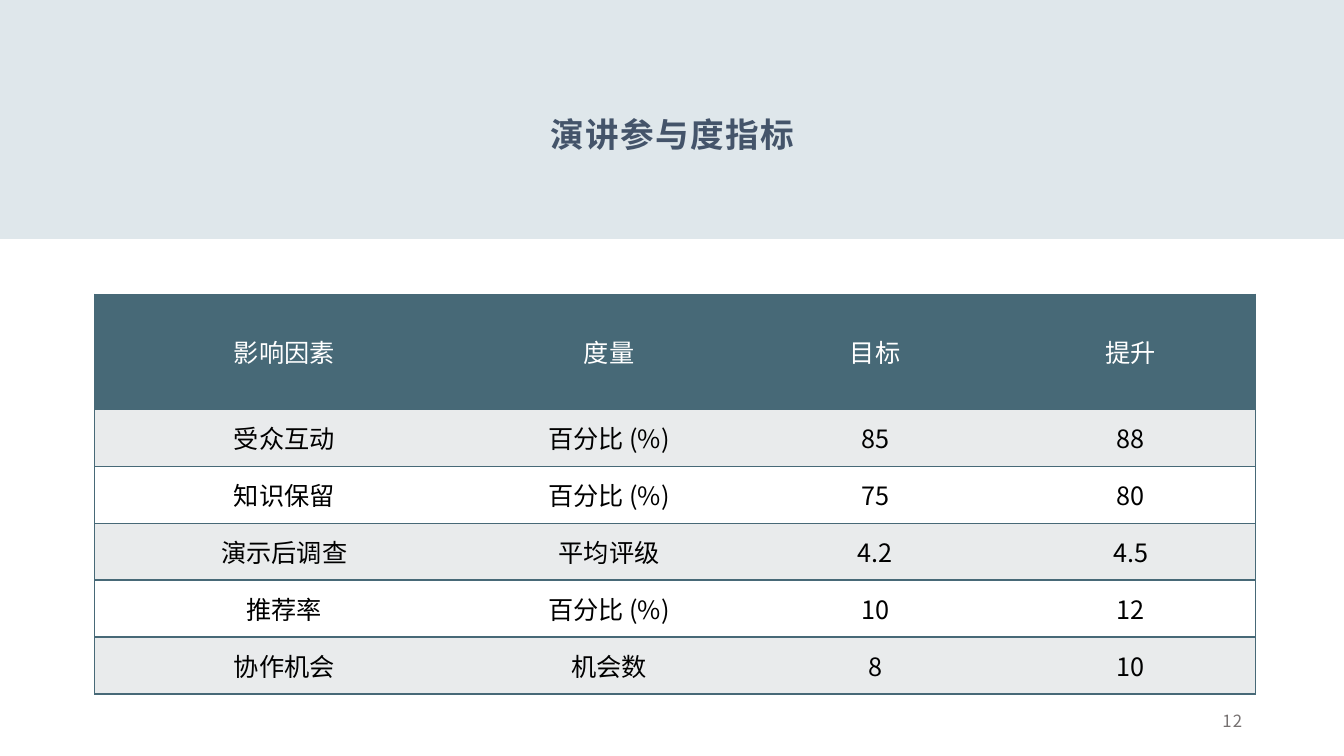
"""Build the slide of speech engagement metrics."""
from lxml.etree import SubElement
from pptx import Presentation
from pptx.dml.color import RGBColor
from pptx.enum.shapes import MSO_SHAPE
from pptx.enum.text import MSO_ANCHOR, MSO_AUTO_SIZE, PP_ALIGN
from pptx.oxml import parse_xml
from pptx.oxml.ns import nsdecls, qn
from pptx.util import Inches, Pt

TITLE = "演讲参与度指标"
PAGE = "12"
ROWS = [
    ("影响因素", "度量", "目标", "提升"),
    ("受众互动", "百分比 (%)", "85", "88"),
    ("知识保留", "百分比 (%)", "75", "80"),
    ("演示后调查", "平均评级", "4.2", "4.5"),
    ("推荐率", "百分比 (%)", "10", "12"),
    ("协作机会", "机会数", "8", "10"),
]
WIDTHS = (3.76, 2.68, 2.6, 2.47)
HEAD, BODY = 1.14, 0.565
FONT = "Noto Sans CJK SC"
PLAIN = "{2D5ABB26-0587-4C30-8999-92F81FD0307C}"
TEAL = RGBColor(0x47, 0x69, 0x77)
PALE = RGBColor(0xD7, 0xE2, 0xE7)
GREY = RGBColor(0xE9, 0xEB, 0xEC)
NAVY = RGBColor(0x44, 0x54, 0x6A)
STONE = RGBColor(0x76, 0x71, 0x71)
WHITE = RGBColor(0xFF, 0xFF, 0xFF)
BLACK = RGBColor(0, 0, 0)


def write(frame, text, size=18, color=BLACK, bold=False, align=PP_ALIGN.CENTER, space=0):
    """Put one formatted line of text into a text frame."""
    line = frame.paragraphs[0]
    line.alignment = align
    run = line.add_run()
    run.text = text
    font = run.font
    font.name, font.size, font.bold = FONT, Pt(size), bold
    font.color.rgb = color
    props = font._element
    SubElement(props, qn("a:ea")).set("typeface", FONT)
    if space:
        props.set("spc", str(space * 100))


def edge(cell, sides):
    """Draw teal borders on the given sides of a cell."""
    for place, side in enumerate(sides):
        line = parse_xml(
            f'<a:ln{side} {nsdecls("a")} w="12700"><a:solidFill>'
            f'<a:srgbClr val="{TEAL}"/></a:solidFill></a:ln{side}>'
        )
        cell._tc.get_or_add_tcPr().insert(place, line)


def add_band(slide, width):
    """Place the pale band behind the title."""
    band = slide.shapes.add_shape(MSO_SHAPE.RECTANGLE, 0, 0, width, Inches(2.37))
    band.shadow.inherit = False
    band.fill.solid()
    band.fill.fore_color.rgb = PALE
    band.line.fill.background()
    tint = band._element.spPr.find(qn("a:solidFill"))[0]
    SubElement(tint, qn("a:alpha")).set("val", "80000")
    slide.shapes._spTree.insert(2, band._element)


def add_title(slide):
    """Fill the title placeholder."""
    title = slide.shapes.title
    title.left, title.top = Inches(0.92), Inches(0.26)
    title.width, title.height = Inches(11.5), Inches(1.33)
    frame = title.text_frame
    frame.auto_size = MSO_AUTO_SIZE.NONE
    frame.vertical_anchor = MSO_ANCHOR.BOTTOM
    write(frame, TITLE, size=24, color=NAVY, bold=True, space=1)
    frame.paragraphs[0].line_spacing = 0.9


def add_grid(slide):
    """Add the table of metrics."""
    heights = [HEAD] + [BODY] * (len(ROWS) - 1)
    table = slide.shapes.add_table(
        len(ROWS), len(WIDTHS), Inches(0.94), Inches(2.92),
        Inches(sum(WIDTHS)), Inches(sum(heights)),
    ).table
    table._tbl.tblPr.find(qn("a:tableStyleId")).text = PLAIN
    for col, width in zip(table.columns, WIDTHS):
        col.width = Inches(width)
    last = len(WIDTHS) - 1
    for r, (row, height) in enumerate(zip(ROWS, heights)):
        table.rows[r].height = Inches(height)
        shade = TEAL if r == 0 else GREY if r % 2 else WHITE
        for c, text in enumerate(row):
            cell = table.cell(r, c)
            cell.vertical_anchor = MSO_ANCHOR.MIDDLE
            cell.fill.solid()
            cell.fill.fore_color.rgb = shade
            write(cell.text_frame, text, color=BLACK if r else WHITE)
            edge(cell, {0: "LTB", last: "RTB"}.get(c, "TB"))


def add_page(slide):
    """Add the page number."""
    box = slide.shapes.add_textbox(Inches(9.42), Inches(6.95), Inches(3), Inches(0.4))
    frame = box.text_frame
    frame.word_wrap = True
    frame.vertical_anchor = MSO_ANCHOR.MIDDLE
    write(frame, PAGE, size=12, color=STONE, align=PP_ALIGN.RIGHT, space=1)


def main():
    """Assemble and save the slide."""
    deck = Presentation()
    deck.slide_width, deck.slide_height = Inches(13.33), Inches(7.5)
    slide = deck.slides.add_slide(deck.slide_layouts[5])
    add_band(slide, deck.slide_width)
    add_title(slide)
    add_grid(slide)
    add_page(slide)
    deck.save("out.pptx")


if __name__ == "__main__":
    main()
